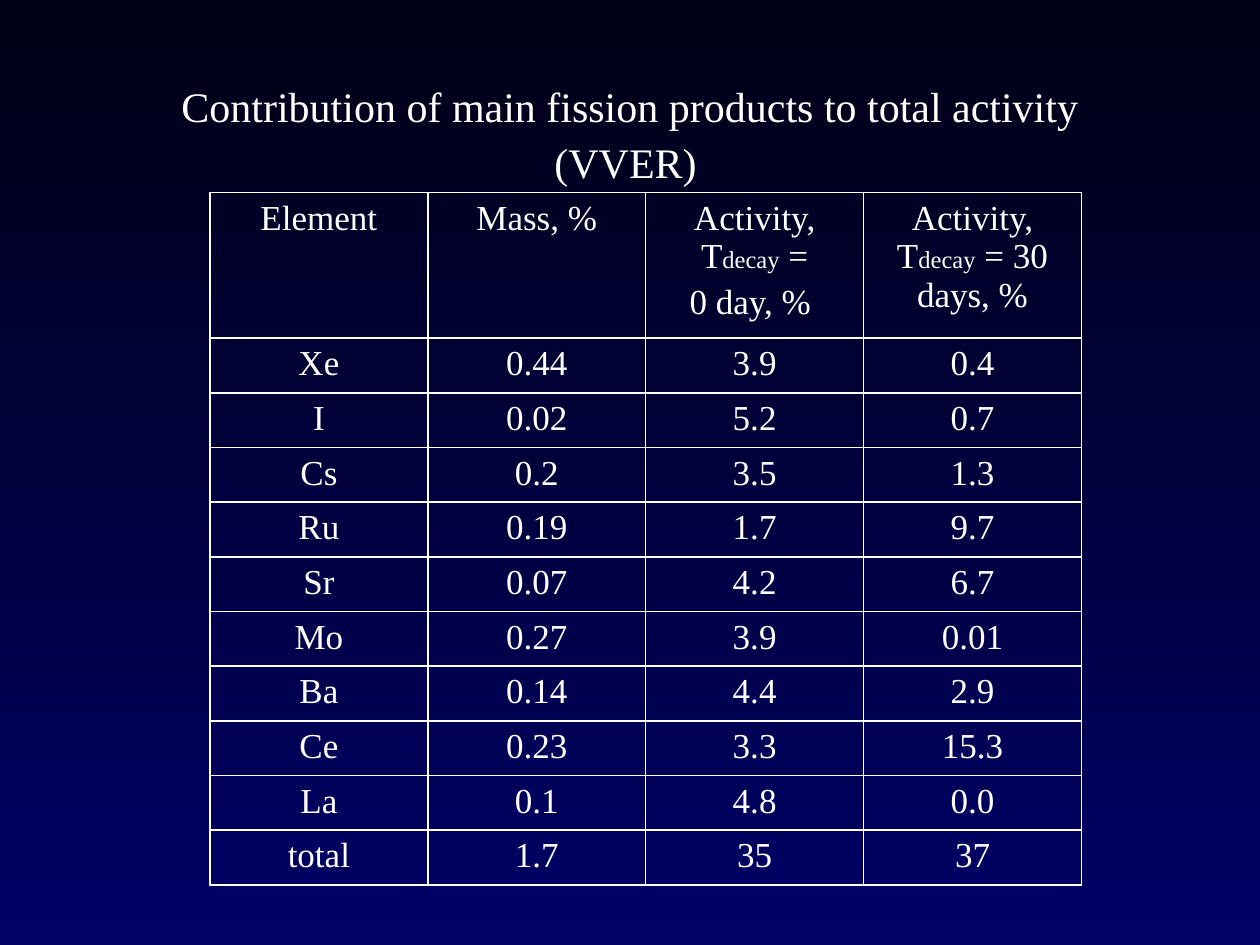
from pptx import Presentation
from pptx.dml.color import RGBColor
from pptx.enum.text import MSO_ANCHOR, PP_ALIGN
from pptx.oxml import parse_xml
from pptx.oxml.ns import nsdecls
from pptx.util import Pt

WHITE = RGBColor(0xFF, 0xFF, 0xFF)
BLACK = RGBColor(0, 0, 0)
NIGHT = RGBColor(0, 0, 0x14)
NAVY = RGBColor(0, 0, 0x66)
FONT = "Times New Roman"

BODY, SMALL = 20, 14
HEADER = [
    [[("Element", BODY)]],
    [[("Mass, %", BODY)]],
    [[("Activity, Т", BODY), ("decay", SMALL), (" =", BODY)], [("0 day, % ", BODY)]],
    [[("Activity, Т", BODY), ("decay", SMALL), (" = 30 days, %", BODY)]],
]
VALUES = [
    ("Xe", "0.44", "3.9", "0.4"),
    ("I", "0.02", "5.2", "0.7"),
    ("Cs", "0.2", "3.5", "1.3"),
    ("Ru", "0.19", "1.7", "9.7"),
    ("Sr", "0.07", "4.2", "6.7"),
    ("Mo", "0.27", "3.9", "0.01"),
    ("Ba", "0.14", "4.4", "2.9"),
    ("Ce", "0.23", "3.3", "15.3"),
    ("La", "0.1", "4.8", "0.0"),
    ("total", "1.7", "35", "37"),
]


def add_span(para, text, size, color=WHITE):
    span = para.add_run()
    span.text = text
    span.font.name = FONT
    span.font.size = Pt(size)
    span.font.color.rgb = color


def add_borders(cell):
    """Give all four sides of a table cell a thin white line."""
    properties = cell._tc.get_or_add_tcPr()
    for index, side in enumerate("LRTB"):
        properties.insert(index, parse_xml(
            f'<a:ln{side} {nsdecls("a")} w="{Pt(1)}"><a:solidFill>'
            f'<a:srgbClr val="{WHITE}"/></a:solidFill></a:ln{side}>'))


deck = Presentation()
deck.slide_width, deck.slide_height = Pt(720), Pt(540)
page = deck.slides.add_slide(deck.slide_layouts[6])

backdrop = page.background.fill
backdrop.gradient()
backdrop.gradient_angle = 270
for stop, color, position in zip(backdrop.gradient_stops, (NIGHT, NAVY), (0, 1)):
    stop.color.rgb = color
    stop.position = position

# Title
title = page.shapes.add_textbox(Pt(54), Pt(48), Pt(612), Pt(54)).text_frame
title.word_wrap = True
title.vertical_anchor = MSO_ANCHOR.MIDDLE
para = title.paragraphs[0]
para.alignment = PP_ALIGN.CENTER
para.line_spacing = 1.1
add_span(para, "Contribution of main fission products to total activity (VVER)", 24)
add_span(para, " ", 20, BLACK)

# Activity table: every cell is a list of paragraphs, each a list of spans
rows = [HEADER] + [[[[(value, BODY)]] for value in row] for row in VALUES]
table = page.shapes.add_table(len(rows), len(HEADER), Pt(120), Pt(110),
                              Pt(498), Pt(28.8 * len(rows))).table
table.first_row = False
table.horz_banding = False
for column in table.columns:
    column.width = Pt(124.5)

for row_index, row in enumerate(rows):
    table.rows[row_index].height = Pt(28.8)
    for column_index, paragraphs in enumerate(row):
        cell = table.cell(row_index, column_index)
        cell.fill.background()
        add_borders(cell)
        for number, spans in enumerate(paragraphs):
            frame = cell.text_frame
            para = frame.add_paragraph() if number else frame.paragraphs[0]
            para.alignment = PP_ALIGN.CENTER
            para.space_before = Pt(4)
            for text, size in spans:
                add_span(para, text, size)

deck.save("out.pptx")
